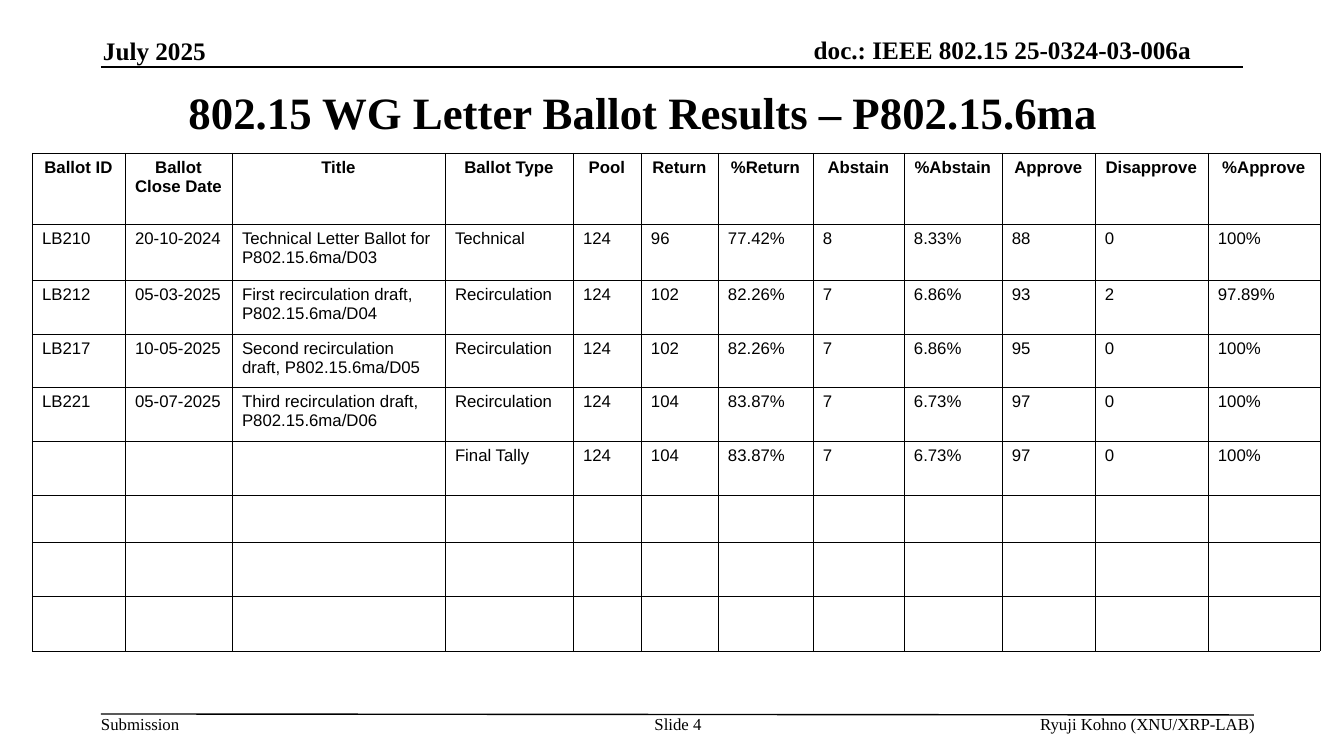
"""Build the letter ballot results slide with its header, footer and table."""
from dataclasses import dataclass

from lxml import etree
from pptx import Presentation
from pptx.dml.color import RGBColor
from pptx.enum.shapes import MSO_CONNECTOR
from pptx.enum.text import MSO_ANCHOR, PP_ALIGN
from pptx.oxml.ns import qn
from pptx.slide import Slide
from pptx.table import _Cell
from pptx.text.text import _Paragraph
from pptx.util import Emu, Pt

LEFT, CENTER, RIGHT = PP_ALIGN.LEFT, PP_ALIGN.CENTER, PP_ALIGN.RIGHT
TOP, MIDDLE, BOTTOM = MSO_ANCHOR.TOP, MSO_ANCHOR.MIDDLE, MSO_ANCHOR.BOTTOM
STRAIGHT = MSO_CONNECTOR.STRAIGHT

EMU_PER_PX = 914400 / 100.8
COLORS = {"ink": "000000", "paper": "FFFFFF"}
SERIF, SANS = "Times New Roman", "Arial"
BORDER_EMU = 762


@dataclass(frozen=True)
class Label:
    text: str
    left: int
    top: int
    width: int
    height: int
    size: int = 12
    bold: bool = False
    align: PP_ALIGN = LEFT
    anchor: MSO_ANCHOR = TOP
    wrap: bool = True


@dataclass(frozen=True)
class Rule:
    left: int
    top: int
    right: int
    bottom: int


@dataclass(frozen=True)
class Ballot:
    ballot_id: str
    close_date: str
    title: str
    kind: str
    counts: tuple[str, ...]

    def cells(self) -> tuple[str, ...]:
        return (self.ballot_id, self.close_date, self.title, self.kind, *self.counts)


RULES = (Rule(101, 67, 1243, 67), Rule(101, 714, 1254, 715))
LABELS = (
    Label("Submission", 101, 714, 79, 20, wrap=False),
    Label("doc.: IEEE 802.15 25-0324-03-006a", 677, 35, 514, 30, 18, True, RIGHT, BOTTOM),
    Label("July 2025", 103, 36, 275, 30, 18, True, LEFT, BOTTOM),
    Label("Ryuji Kohno (XNU/XRP-LAB)", 787, 714, 468, 20, align=RIGHT),
    Label("Slide 4", 639, 714, 78, 40, align=CENTER),
    Label("802.15 WG Letter Ballot Results – P802.15.6ma", 72, 80, 1142, 64, 32, True, CENTER, MIDDLE),
)

TABLE_LEFT, TABLE_TOP = 32, 153
COLUMN_WIDTHS = (93, 107, 213, 128, 68, 77, 95, 91, 98, 93, 113, 112)
ROW_HEIGHTS = (71, 56, 54, 53, 54, 54, 47, 54, 55)
HEADERS = (
    "Ballot ID", "Ballot Close Date", "Title", "Ballot Type", "Pool", "Return",
    "%Return", "Abstain", "%Abstain", "Approve", "Disapprove", "%Approve",
)
BALLOTS = (
    Ballot("LB210", "20-10-2024", "Technical Letter Ballot for P802.15.6ma/D03", "Technical",
           ("124", "96", "77.42%", "8", "8.33%", "88", "0", "100%")),
    Ballot("LB212", "05-03-2025", "First recirculation draft, P802.15.6ma/D04", "Recirculation",
           ("124", "102", "82.26%", "7", "6.86%", "93", "2", "97.89%")),
    Ballot("LB217", "10-05-2025", "Second recirculation draft, P802.15.6ma/D05", "Recirculation",
           ("124", "102", "82.26%", "7", "6.86%", "95", "0", "100%")),
    Ballot("LB221", "05-07-2025", "Third recirculation draft, P802.15.6ma/D06", "Recirculation",
           ("124", "104", "83.87%", "7", "6.73%", "97", "0", "100%")),
    Ballot("", "", "", "Final Tally",
           ("124", "104", "83.87%", "7", "6.73%", "97", "0", "100%")),
)


def px(length: int) -> Emu:
    return Emu(round(length * EMU_PER_PX))


def color(name: str) -> RGBColor:
    return RGBColor.from_string(COLORS[name])


def add_text(paragraph: _Paragraph, text: str, font_name: str, size: int,
             bold: bool, align: PP_ALIGN) -> None:
    paragraph.alignment = align
    run = paragraph.add_run()
    run.text = text
    run.font.name = font_name
    run.font.size = Pt(size)
    run.font.bold = bold
    run.font.color.rgb = color("ink")


def draw_rule(slide: Slide, rule: Rule) -> None:
    connector = slide.shapes.add_connector(
        STRAIGHT, px(rule.left), px(rule.top), px(rule.right), px(rule.bottom))
    connector.line.color.rgb = color("ink")
    connector.line.width = Pt(1)
    etree.SubElement(connector._element.spPr, qn("a:effectLst"))


def draw_label(slide: Slide, label: Label) -> None:
    box = slide.shapes.add_textbox(
        px(label.left), px(label.top), px(label.width), px(label.height))
    frame = box.text_frame
    frame.word_wrap = label.wrap
    frame.vertical_anchor = label.anchor
    frame.margin_left = frame.margin_right = 0
    frame.margin_top = frame.margin_bottom = 0
    add_text(frame.paragraphs[0], label.text, SERIF, label.size, label.bold, label.align)


def add_borders(cell: _Cell) -> None:
    properties = cell._tc.get_or_add_tcPr()
    for side in ("lnL", "lnR", "lnT", "lnB"):
        line = etree.SubElement(properties, qn(f"a:{side}"), w=str(BORDER_EMU))
        fill = etree.SubElement(line, qn("a:solidFill"))
        etree.SubElement(fill, qn("a:srgbClr"), val=COLORS["ink"])


def draw_ballot_table(slide: Slide) -> None:
    table = slide.shapes.add_table(
        len(ROW_HEIGHTS), len(COLUMN_WIDTHS), px(TABLE_LEFT), px(TABLE_TOP),
        px(sum(COLUMN_WIDTHS)), px(sum(ROW_HEIGHTS))).table
    table.first_row = table.horz_banding = False
    for column, width in zip(table.columns, COLUMN_WIDTHS):
        column.width = px(width)
    for row, height in zip(table.rows, ROW_HEIGHTS):
        row.height = px(height)
    for cell in table.iter_cells():
        add_borders(cell)
        cell.fill.background()
    contents = (HEADERS, *(ballot.cells() for ballot in BALLOTS))
    for row_index, texts in enumerate(contents):
        is_header = row_index == 0
        for column_index, text in enumerate(texts):
            if text:
                paragraph = table.cell(row_index, column_index).text_frame.paragraphs[0]
                add_text(paragraph, text, SANS, 12, is_header, CENTER if is_header else LEFT)


def main() -> None:
    presentation = Presentation()
    presentation.slide_width, presentation.slide_height = px(1344), px(756)
    slide = presentation.slides.add_slide(presentation.slide_layouts[6])
    slide.background.fill.solid()
    slide.background.fill.fore_color.rgb = color("paper")
    for rule in RULES:
        draw_rule(slide, rule)
    for label in LABELS:
        draw_label(slide, label)
    draw_ballot_table(slide)
    presentation.save("out.pptx")


if __name__ == "__main__":
    main()
